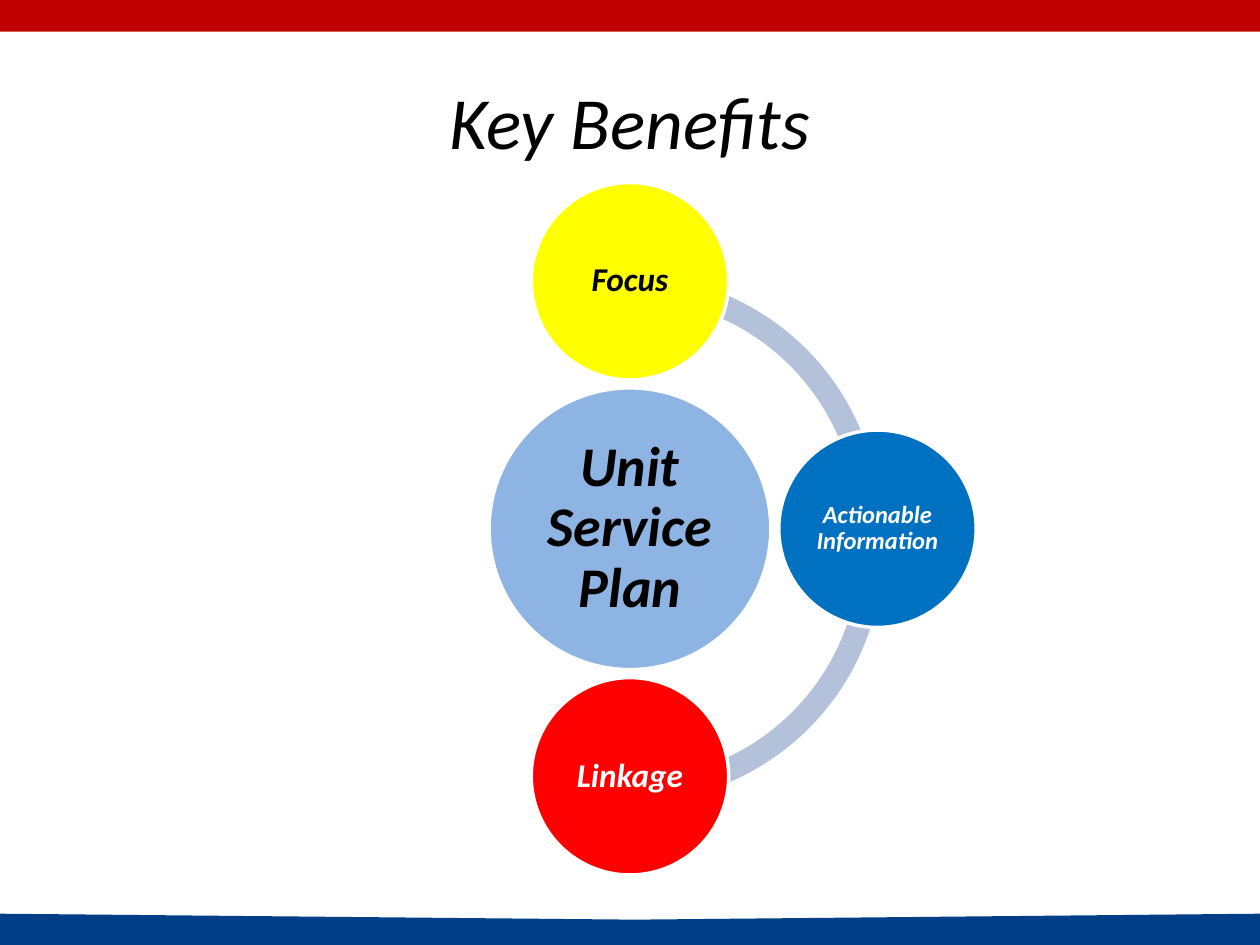
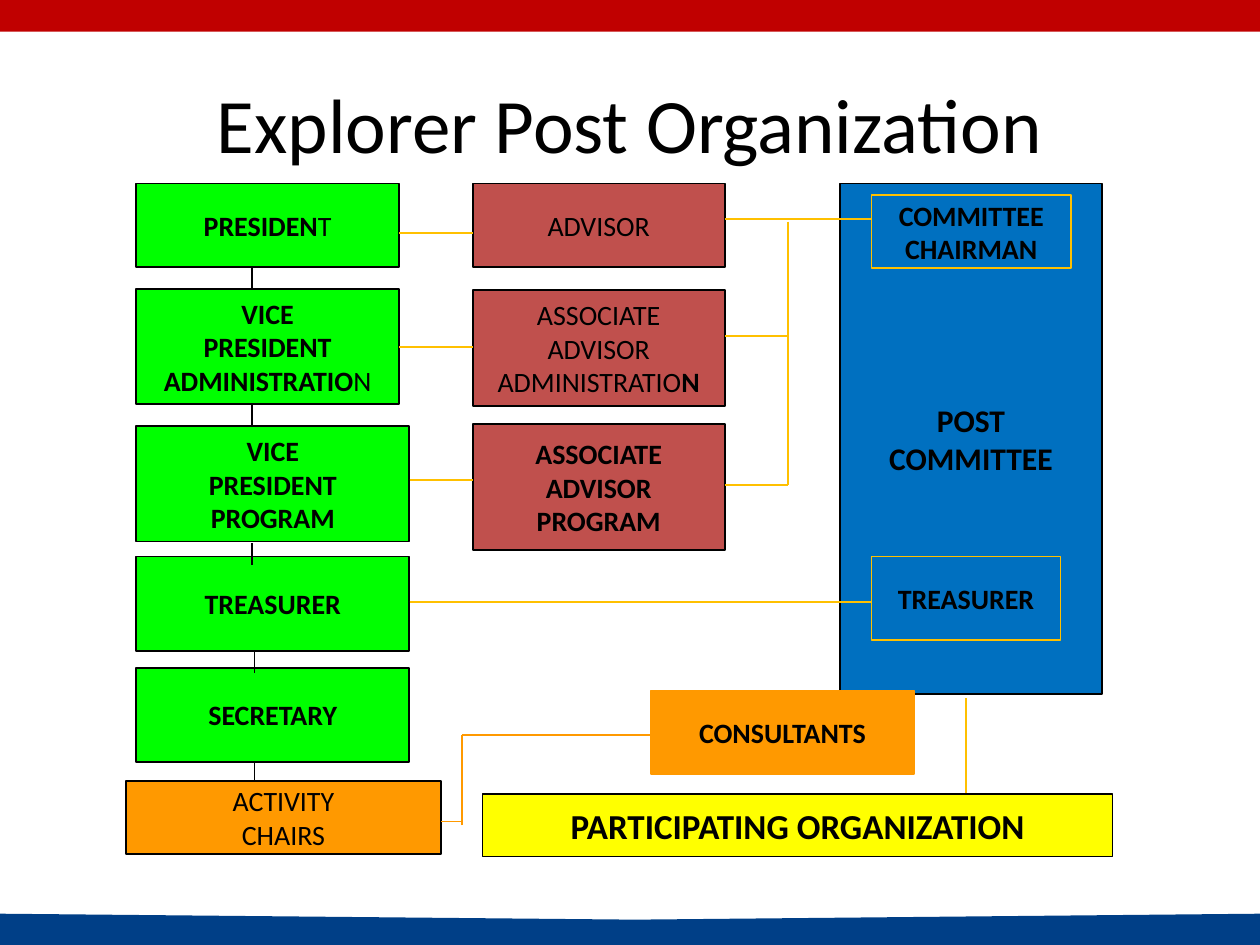
from dataclasses import dataclass
from math import cos, radians, sin
from typing import NamedTuple

from lxml.etree import SubElement
from pptx import Presentation
from pptx.dml.color import RGBColor as Color
from pptx.enum.shapes import MSO_CONNECTOR as Wire, MSO_SHAPE as Form
from pptx.enum.text import MSO_ANCHOR as Anchor, MSO_AUTO_SIZE as Fit, PP_ALIGN as Align
from pptx.oxml.ns import qn
from pptx.shapes.autoshape import Shape
from pptx.slide import Slide
from pptx.util import Cm, Pt


@dataclass(frozen=True)
class Theme:
    face: str = "Calibri"
    black: str = "000000"
    white: str = "FFFFFF"
    band: str = "C00000"
    base: str = "003F87"
    arc: str = "B3C1DB"
    sky: str = "8EB4E3"
    blue: str = "0070C0"
    red: str = "FF0000"
    yellow: str = "FFFF00"
    green: str = "00FF00"
    brick: str = "C0504D"
    orange: str = "FF9900"
    gold: str = "FFC000"
    title: int = 44
    lead: int = 42
    hub: int = 32
    node: int = 19
    small: int = 14
    box: int = 16
    group: int = 18
    large: int = 20


T = Theme()
WIDE, HIGH = 25.4, 19.05
MID_X, MID_Y, ORBIT = 12.7, 10.66, 4.99


class Arc(NamedTuple):
    left: float
    top: float
    start: float
    end: float


class Disc(NamedTuple):
    text: str
    fill: str
    ink: str
    size: int
    angle: float


class Box(NamedTuple):
    text: str
    left: float
    top: float
    width: float
    height: float
    fill: str
    edge: str = T.black
    size: int = T.box
    bold: bool = True
    flip: bool = False


class Link(NamedTuple):
    x1: float
    y1: float
    x2: float
    y2: float
    ink: str


ARCS = [Arc(7.59, 5.97, 0, 54), Arc(7.54, 5.54, 162, 0)]
DISCS = [
    Disc("Focus", T.yellow, T.black, T.node, -90),
    Disc("Actionable Information", T.blue, T.white, T.small, 0),
    Disc("Linkage", T.red, T.white, T.node, 90),
]

LEFT, NEXT, LAST = 2.75, 9.53, 17.57
SLIM, BROAD = 5.29, 5.5
BOXES = [
    Box("POST\nCOMMITTEE", 16.93, 3.7, SLIM, 10.29, T.blue, size=T.group),
    Box("ADVISOR", NEXT, 3.7, 5.08, 1.69, T.brick, bold=False),
    Box("ASSOCIATE\nADVISOR\nADMINISTRATION", NEXT, 5.85, 5.08, 2.33, T.brick,
        bold=False, flip=True),
    Box("ASSOCIATE\nADVISOR\nPROGRAM", NEXT, 8.55, 5.08, 2.54, T.brick),
    Box("PARTICIPATING ORGANIZATION", 9.73, 16, 12.7, 1.27, T.yellow, size=T.large),
    Box("CONSULTANTS", 13.13, 13.92, SLIM, 1.69, T.orange, T.orange),
    Box("PRESIDENT", LEFT, 3.7, SLIM, 1.69, T.green, flip=True),
    Box("VICE\nPRESIDENT\nADMINISTRATION", LEFT, 5.82, SLIM, 2.33, T.green, flip=True),
    Box("VICE\nPRESIDENT\nPROGRAM", LEFT, 8.59, BROAD, 2.33, T.green),
    Box("TREASURER", LEFT, 11.22, BROAD, 1.9, T.green),
    Box("SECRETARY", LEFT, 13.46, BROAD, 1.9, T.green),
    Box("ACTIVITY\nCHAIRS", 2.54, 15.74, 6.35, 1.48, T.orange, bold=False),
    Box("TREASURER", LAST, 11.22, 3.81, 1.69, T.blue, T.gold),
    Box("COMMITTEE\nCHAIRMAN", LAST, 3.93, 4.02, 1.48, T.blue, T.gold),
]

TRUNK, SIDE, ELBOW = 15.88, 14.61, 9.32
SPANS = [
    (8.26, LAST, 12.14),
    (SIDE, LAST, 4.42),
    (SIDE, TRUNK, 6.78),
    (SIDE, TRUNK, 9.78),
    (8.05, NEXT, 4.7),
    (8.05, NEXT, 6.99),
    (8.26, NEXT, 9.68),
]
DROPS = [
    (5.08, 5.41, 5.82),
    (5.08, 8.15, 8.56),
    (5.08, 10.95, 11.38),
    (5.13, 13.13, 13.56),
    (5.13, 15.34, 15.75),
]
LINKS = [
    *(Link(x1, y, x2, y, T.gold) for x1, x2, y in SPANS),
    *(Link(x, y1, x, y2, T.black) for x, y1, y2 in DROPS),
    Link(TRUNK, 4.47, TRUNK, 9.78, T.gold),
    Link(19.48, 14.07, 19.48, 15.98, T.gold),
    Link(8.89, 16.56, ELBOW, 16.56, T.orange),
    Link(ELBOW, 16.64, ELBOW, 14.81, T.orange),
    Link(ELBOW, 14.81, 13.13, 14.81, T.orange),
]


def paint(shape: Shape, fill: str, edge: str = "", width: float = 1) -> None:
    shape.shadow.inherit = False
    shape.fill.solid()
    shape.fill.fore_color.rgb = Color.from_string(fill)
    if edge:
        shape.line.color.rgb = Color.from_string(edge)
        shape.line.width = Pt(width)
    else:
        shape.line.fill.background()


def add_form(slide: Slide, form: Form, left: float, top: float,
             width: float, height: float) -> Shape:
    return slide.shapes.add_shape(form, Cm(left), Cm(top), Cm(width), Cm(height))


def write(shape: Shape, text: str, size: int, ink: str, bold: bool = False,
          slant: bool = False) -> None:
    frame = shape.text_frame
    frame.text = text
    frame.vertical_anchor = Anchor.MIDDLE
    for para in frame.paragraphs:
        para.alignment = Align.CENTER
        font = para.font
        font.name, font.size = T.face, Pt(size)
        font.bold, font.italic = bold, slant
        font.color.rgb = Color.from_string(ink)


def add_page(deck: Presentation, text: str, top: float, size: int,
             slant: bool = False) -> Slide:
    slide = deck.slides.add_slide(deck.slide_layouts.get_by_name("Title Only"))
    paint(add_form(slide, Form.RECTANGLE, 0, 0, WIDE, 0.64), T.band)
    pen = slide.shapes.build_freeform(Cm(0), Cm(18.42))
    edge = [(12.8, 18.54), (WIDE, 18.42), (WIDE, HIGH), (0, HIGH)]
    pen.add_line_segments([(Cm(x), Cm(y)) for x, y in edge])
    paint(pen.convert_to_shape(), T.base)
    title = slide.shapes.title
    title.left, title.top = Cm(1.27), Cm(top)
    title.width, title.height = Cm(22.86), Cm(2.46)
    write(title, text, size, T.black, slant=slant)
    title.text_frame.auto_size = Fit.NONE
    return slide


def add_arc(slide: Slide, arc: Arc) -> None:
    shape = add_form(slide, Form.BLOCK_ARC, arc.left, arc.top, 10.21, 10.21)
    for spot, value in enumerate((arc.start, arc.end, 0.046)):
        shape.adjustments[spot] = value
    paint(shape, T.arc)


def add_disc(slide: Slide, disc: Disc, width: float, orbit: float) -> None:
    turn = radians(disc.angle)
    left = MID_X + orbit * cos(turn) - width / 2
    top = MID_Y + orbit * sin(turn) - width / 2
    shape = add_form(slide, Form.OVAL, left, top, width, width)
    paint(shape, disc.fill, T.white, 2)
    write(shape, disc.text, disc.size, disc.ink, True, True)
    frame = shape.text_frame
    frame.word_wrap = True
    frame.margin_left = frame.margin_right = Cm(0.08)
    frame.margin_top = frame.margin_bottom = Cm(0.08)
    frame.paragraphs[0].line_spacing = 0.9


def add_box(slide: Slide, box: Box) -> None:
    shape = add_form(slide, Form.RECTANGLE, box.left, box.top, box.width, box.height)
    paint(shape, box.fill, box.edge)
    write(shape, box.text, box.size, T.black, box.bold)
    shape.text_frame.word_wrap = False
    if box.flip:
        para = shape.text_frame.paragraphs[-1]
        run = para.runs[0]
        run.text = run.text[:-1]
        tail = para.add_run()
        tail.text = box.text[-1]
        tail.font.bold = not box.bold


def add_link(slide: Slide, link: Link) -> None:
    line = slide.shapes.add_connector(
        Wire.STRAIGHT, Cm(link.x1), Cm(link.y1), Cm(link.x2), Cm(link.y2))
    line.line.color.rgb = Color.from_string(link.ink)
    line.line.width = Pt(1)
    SubElement(line._element.spPr, qn("a:effectLst"))


def main() -> None:
    deck = Presentation()
    deck.slide_width, deck.slide_height = Cm(WIDE), Cm(HIGH)

    gains = add_page(deck, "Key Benefits", 1.19, T.lead, True)
    for arc in ARCS:
        add_arc(gains, arc)
    add_disc(gains, Disc("Unit Service Plan", T.sky, T.black, T.hub, 0), 5.68, 0)
    for disc in DISCS:
        add_disc(gains, disc, 3.98, ORBIT)

    chart = add_page(deck, "Explorer Post Organization", 1.24, T.title)
    for box in BOXES:
        add_box(chart, box)
    for link in LINKS:
        add_link(chart, link)

    deck.save("out.pptx")


if __name__ == "__main__":
    main()
